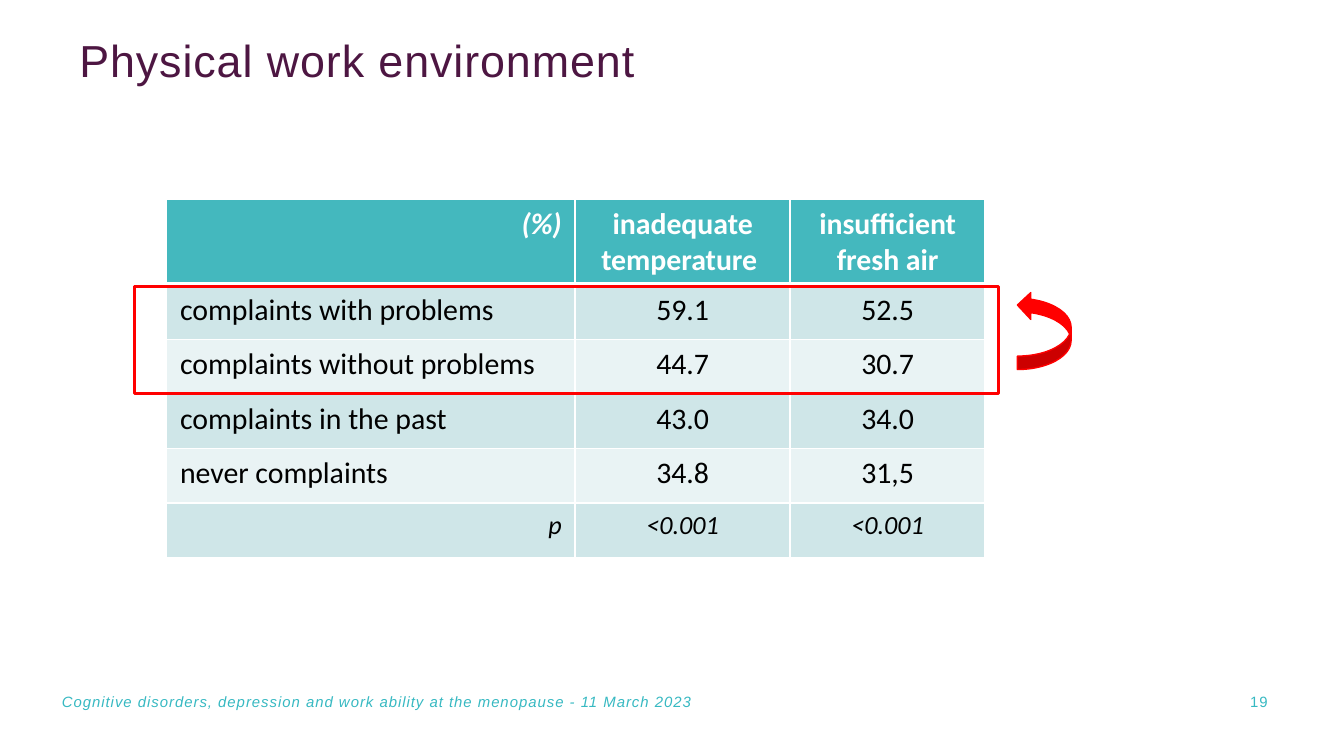
from lxml import etree
from pptx import Presentation
from pptx import util as u
from pptx.dml.color import RGBColor
from pptx.enum import shapes, text
from pptx.oxml import ns

# Content
TITLE = "Physical work environment"
FOOTER = "Cognitive disorders, depression and work ability at the menopause - 11 March 2023"
PAGE = "19"
ROWS = [
    ("(%)", "inadequate temperature ", "insufficient fresh air"),
    ("complaints with problems", "59.1", "52.5"),
    ("complaints without problems", "44.7", "30.7"),
    ("complaints in the past", "43.0", "34.0"),
    ("never complaints", "34.8", "31,5"),
    ("p", "<0.001", "<0.001"),
]

# Theme and grid (inches, points)
THEME = dict(
    head_font="Arial", body_font="Calibri",
    title="4D1642", footer="37B9C2", header="44B8BE", bands=("E9F3F4", "CFE6E8"),
    white="FFFFFF", ink="000000", accent="FF0000",
    title_size=24, table_size=16, p_size=14, footer_size=8, spacing=0.5,
)
WIDTH = 10
HEIGHT = WIDTH * 9 / 16
TABLE_X, TABLE_Y, TABLE_H = 1.24, 1.48, 2.67
COLS = (3.04, 1.6, 1.45)
HEADER_H = 0.64
ROW_H = (TABLE_H - HEADER_H) / (len(ROWS) - 1)
FOOTER_Y, FOOTER_H = 5.07, 0.3
ALIGN = text.PP_ALIGN


def rgb(name):
    return RGBColor.from_string(THEME.get(name, name))


def add_run(p, words, font, size, color, bold=False, italic=False, spacing=0):
    r = p.add_run()
    r.text = words
    r.font.name, r.font.size = font, u.Pt(size)
    r.font.bold, r.font.italic = bold, italic
    r.font.color.rgb = rgb(color)
    if spacing:
        r.font._element.set("spc", str(int(spacing * 100)))


def add_label(s, box, words, size, color, align=ALIGN.LEFT, inset=0.0, italic=False,
              anchor=text.MSO_ANCHOR.MIDDLE, line=1.0):
    tf = s.shapes.add_textbox(*map(u.Inches, box)).text_frame
    tf.word_wrap = True
    tf.vertical_anchor = anchor
    tf.margin_left = tf.margin_right = u.Inches(inset)
    tf.margin_top = tf.margin_bottom = u.Inches(inset / 2)
    p = tf.paragraphs[0]
    p.alignment, p.line_spacing = align, line
    add_run(p, words, THEME["head_font"], size, color, italic=italic, spacing=THEME["spacing"])


def set_header_borders(cell):
    props = cell._tc.get_or_add_tcPr()
    sides = {"lnL": 1, "lnR": 1, "lnT": 1, "lnB": 3}
    for i, (side, width) in enumerate(sides.items()):
        ln = etree.Element(ns.qn("a:" + side), w=str(u.Pt(width)))
        fill = etree.SubElement(ln, ns.qn("a:solidFill"))
        etree.SubElement(fill, ns.qn("a:srgbClr"), val=THEME["white"])
        props.insert(i, ln)


def add_mark(s, kind, box, width, filled):
    sp = s.shapes.add_shape(kind, *map(u.Inches, box))
    sp.shadow.inherit = False
    if filled:
        sp.fill.solid()
        sp.fill.fore_color.rgb = rgb("accent")
    else:
        sp.fill.background()
    sp.line.color.rgb = rgb("accent")
    sp.line.width = u.Pt(width)
    return sp


def add_results(s):
    box = (TABLE_X, TABLE_Y, sum(COLS), TABLE_H)
    table = s.shapes.add_table(len(ROWS), len(COLS), *map(u.Inches, box)).table
    for col, width in zip(table.columns, COLS):
        col.width = u.Inches(width)
    for i, row in enumerate(ROWS):
        header, last = i == 0, i == len(ROWS) - 1
        table.rows[i].height = u.Inches(HEADER_H if header else ROW_H)
        for j, words in enumerate(row):
            cell = table.cell(i, j)
            cell.fill.solid()
            cell.fill.fore_color.rgb = rgb("header" if header else THEME["bands"][i % 2])
            if header:
                set_header_borders(cell)
            p = cell.text_frame.paragraphs[0]
            p.alignment = ALIGN.CENTER if j else ALIGN.RIGHT if header or last else ALIGN.LEFT
            add_run(p, words, THEME["body_font"], THEME["p_size" if last else "table_size"],
                    "white" if header else "ink", bold=header,
                    italic=last or (header and j == 0))


def main():
    prs = Presentation()
    prs.slide_width, prs.slide_height = u.Inches(WIDTH), u.Inches(HEIGHT)
    s = prs.slides.add_slide(prs.slide_layouts[6])

    # Title and results
    add_label(s, (0.59, 0.32, 7.38, 0.61), TITLE, THEME["title_size"], "title",
              anchor=text.MSO_ANCHOR.TOP, line=0.8)
    add_results(s)

    # Page number and footer
    add_label(s, (7.88, FOOTER_Y, 1.65, FOOTER_H), PAGE, THEME["footer_size"], "footer",
              align=ALIGN.RIGHT, inset=0.1)
    add_label(s, (0.46, FOOTER_Y, 8.02, FOOTER_H), FOOTER, THEME["footer_size"], "footer",
              italic=True)

    # Frame round the first two result rows, with an arrow pointing up
    kinds = shapes.MSO_SHAPE
    add_mark(s, kinds.RECTANGLE, (1, 2.13, 6.43, 0.8), 1.5, False)
    arrow = add_mark(s, kinds.CURVED_LEFT_ARROW, (7.57, 2.17, 0.4, 0.58), 0.75, True)
    arrow._element.spPr.find(ns.qn("a:xfrm")).set("flipV", "1")

    prs.save("out.pptx")


if __name__ == "__main__":
    main()
